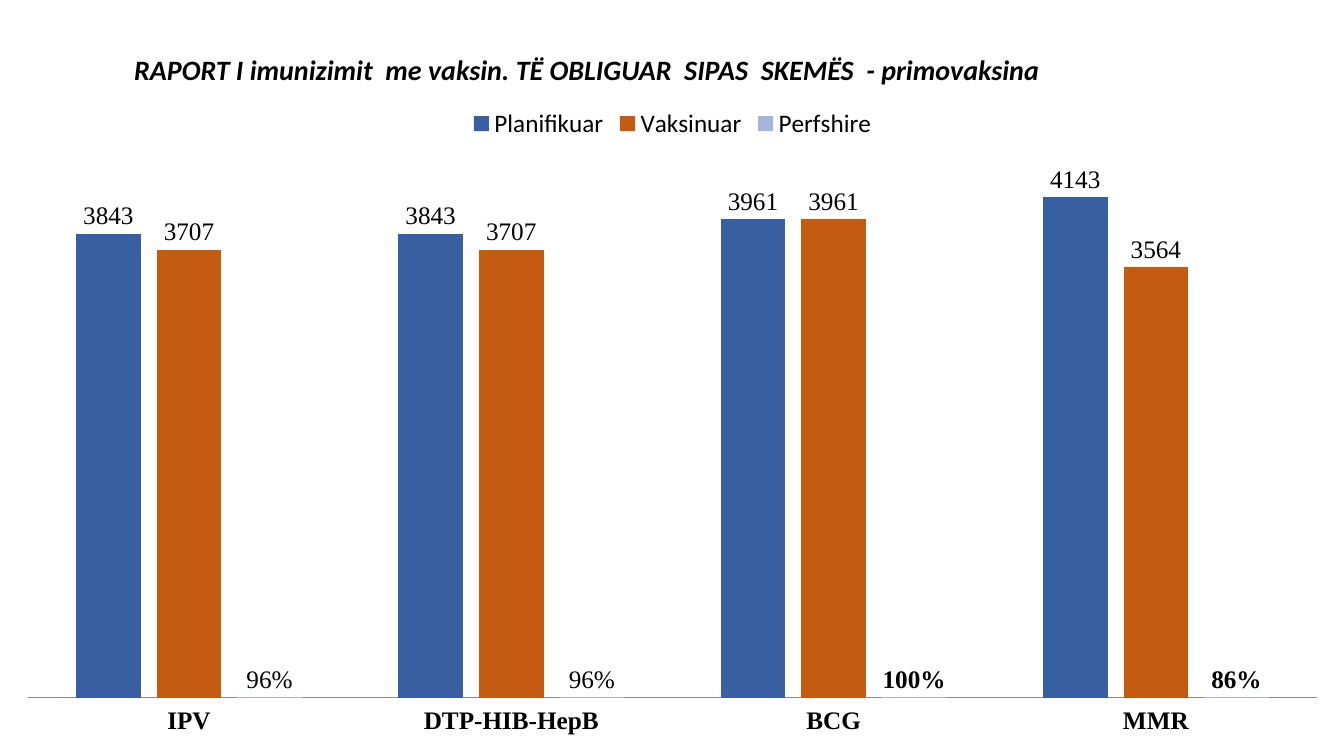
from pptx import Presentation
from pptx.chart.data import CategoryChartData
from pptx.dml.color import RGBColor
from pptx.enum.chart import (
    XL_CHART_TYPE, XL_LABEL_POSITION, XL_LEGEND_POSITION, XL_TICK_LABEL_POSITION, XL_TICK_MARK)
from pptx.enum.text import MSO_ANCHOR, PP_ALIGN
from pptx.oxml import parse_xml
from pptx.oxml.ns import nsdecls, qn
from pptx.util import Pt

EMU_PER_PX = 914400 / 100.8
BLACK = RGBColor(0x00, 0x00, 0x00)
BLUE = RGBColor(0x37, 0x5F, 0xA2)
ORANGE = RGBColor(0xC5, 0x5A, 0x11)
PALE_BLUE = RGBColor(0xA5, 0xB5, 0xDC)
AXIS_GREY = RGBColor(0x8B, 0x8B, 0x8B)

TITLE = "RAPORT I imunizimit  me vaksin. TË OBLIGUAR  SIPAS  SKEMËS  - primovaksina"
VACCINES = ["IPV", "DTP-HIB-HepB", "BCG", "MMR"]
SERIES = [
    ("Planifikuar", [3843, 3843, 3961, 4143], "0", BLUE, []),
    ("Vaksinuar", [3707, 3707, 3961, 3564], "0", ORANGE, []),
    ("Perfshire", [0.96, 0.96, 1, 0.86], "0%", PALE_BLUE, [2, 3]),
]
TITLE_FONT = {"name": "Calibri", "size": Pt(20), "bold": True, "italic": True}
CHART_FONT = {"name": "Calibri", "size": Pt(18), "bold": False}
LABEL_FONT = {"name": "Times New Roman", "size": Pt(18), "bold": False}
BOLD_FONT = {**LABEL_FONT, "bold": True}
PLOT_LAYOUT = {"x": 0.02, "y": 0.09, "w": 0.96, "h": 0.84}


def px(length):
    """Turn pixels into EMU."""
    return round(length * EMU_PER_PX)


def apply(target, values):
    """Set each named attribute on the target."""
    for name, value in values.items():
        setattr(target, name, value)


def style_font(font, values):
    """Format a font in black with the given values."""
    apply(font, values)
    font.color.rgb = BLACK


def add_title(page):
    """Place and format the title placeholder."""
    box = page.shapes.title
    apply(box, {"left": px(90), "top": px(25), "width": px(1008), "height": px(126)})
    apply(box.text_frame, {
        "word_wrap": True, "vertical_anchor": MSO_ANCHOR.MIDDLE,
        "margin_left": px(10), "margin_right": px(24),
        "margin_top": px(5), "margin_bottom": px(39)})
    para = box.text_frame.paragraphs[0]
    apply(para, {"alignment": PP_ALIGN.CENTER, "line_spacing": 0.9})
    span = para.add_run()
    span.text = TITLE
    style_font(span.font, TITLE_FONT)


def set_plot_layout(chart):
    """Fix the inner plot area as fractions of the chart."""
    area = chart.element.find(".//" + qn("c:plotArea"))
    for layout in area.findall(qn("c:layout")):
        area.remove(layout)
    sizes = "".join(f'<c:{key} val="{value}"/>' for key, value in PLOT_LAYOUT.items())
    area.insert(0, parse_xml(
        f'<c:layout {nsdecls("c")}><c:manualLayout><c:layoutTarget val="inner"/>'
        f'<c:xMode val="edge"/><c:yMode val="edge"/>{sizes}</c:manualLayout></c:layout>'))


def style_axes(chart):
    """Show only the category axis line and its names."""
    apply(chart.value_axis, {
        "visible": False, "has_major_gridlines": False,
        "minimum_scale": 0, "maximum_scale": 4500})
    axis = chart.category_axis
    apply(axis, {
        "major_tick_mark": XL_TICK_MARK.NONE, "minor_tick_mark": XL_TICK_MARK.NONE,
        "tick_label_position": XL_TICK_LABEL_POSITION.LOW})
    style_font(axis.tick_labels.font, BOLD_FONT)
    axis.format.line.color.rgb = AXIS_GREY
    axis.format.line.width = Pt(0.75)


def style_series(series, number_format, color, bold_points):
    """Colour a series and format its value labels."""
    series.format.fill.solid()
    series.format.fill.fore_color.rgb = color
    series.invert_if_negative = False
    apply(series.data_labels, {
        "show_value": True, "number_format": number_format,
        "number_format_is_linked": False, "position": XL_LABEL_POSITION.OUTSIDE_END})
    style_font(series.data_labels.font, LABEL_FONT)
    for index in bold_points:
        label = series.points[index].data_label
        style_font(label.font, BOLD_FONT)
        label.position = XL_LABEL_POSITION.OUTSIDE_END


def add_vaccine_chart(page):
    """Add the clustered columns of planned and given vaccines."""
    data = CategoryChartData()
    data.categories = VACCINES
    for name, values, number_format, _, _ in SERIES:
        data.add_series(name, values, number_format)
    chart = page.shapes.add_chart(
        XL_CHART_TYPE.COLUMN_CLUSTERED, px(1), px(96), px(1343), px(647), data).chart
    style_font(chart.font, CHART_FONT)
    apply(chart, {"has_title": False, "has_legend": True})
    apply(chart.legend, {"position": XL_LEGEND_POSITION.TOP, "include_in_layout": False})
    style_font(chart.legend.font, CHART_FONT)
    plot = chart.plots[0]
    apply(plot, {"gap_width": 150, "overlap": -25, "vary_by_categories": False})
    for series, (_, _, number_format, color, bold_points) in zip(plot.series, SERIES):
        style_series(series, number_format, color, bold_points)
    style_axes(chart)
    set_plot_layout(chart)


def main():
    """Build and save the deck."""
    deck = Presentation()
    apply(deck, {"slide_width": px(1344), "slide_height": px(756)})
    page = deck.slides.add_slide(deck.slide_layouts[5])
    add_title(page)
    add_vaccine_chart(page)
    deck.save("out.pptx")


if __name__ == "__main__":
    main()
